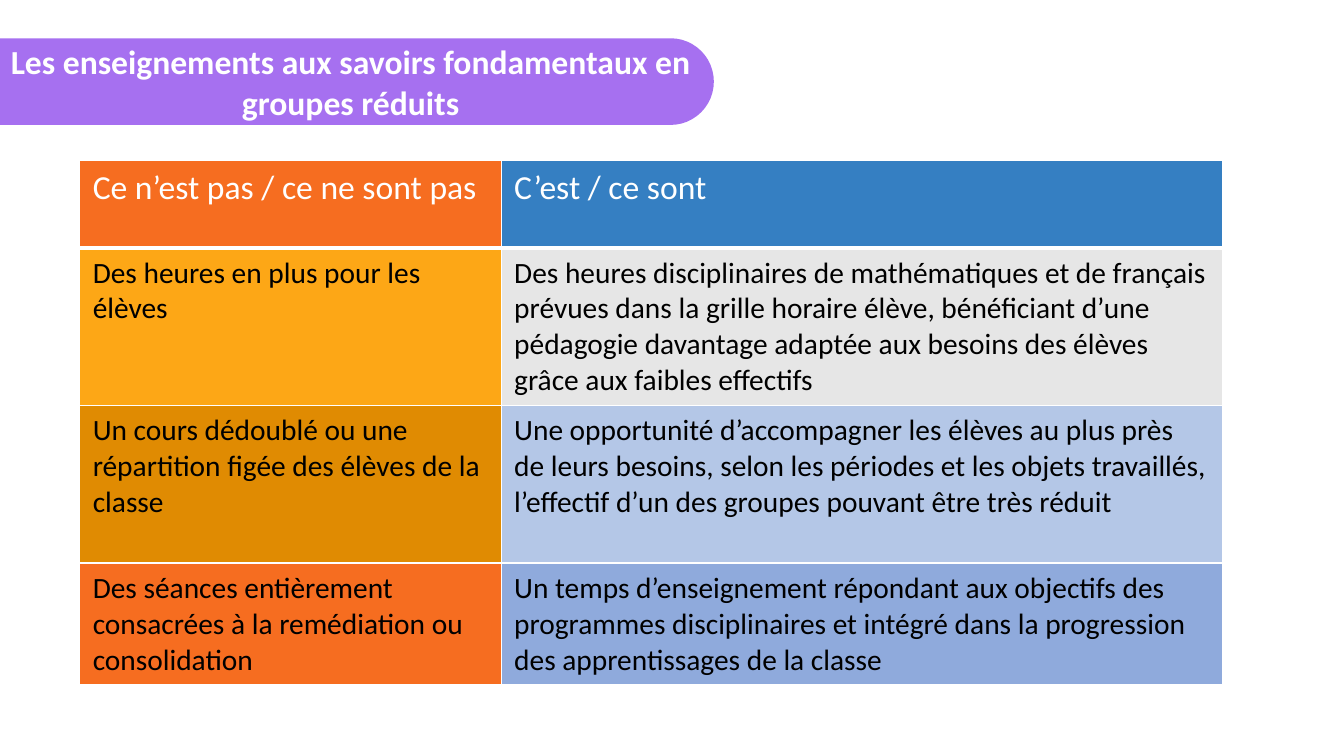
from dataclasses import dataclass

from lxml.etree import SubElement
from pptx import Presentation
from pptx.dml.color import RGBColor
from pptx.enum.shapes import MSO_SHAPE as Shape
from pptx.enum.text import MSO_ANCHOR as Anchor, PP_ALIGN as Align
from pptx.oxml.ns import qn
from pptx.util import Inches, Pt


@dataclass(frozen=True)
class Theme:
    font: str = "Calibri"
    heading_size: int = 24
    body_size: int = 21
    white: str = "FFFFFF"
    black: str = "000000"
    banner: str = "A670F0"
    left_fills: tuple = ("F66D20", "FDA716", "E08B02", "F66D20")
    right_fills: tuple = ("357FC2", "E6E6E6", "B4C7E7", "8FAADC")


THEME = Theme()
WIDTH, HEIGHT = 13.33, 7.5
COLUMNS = (4.18, 7.16)
ROWS = (0.87, 1.56, 1.56, 1.2)
TITLE = "Les enseignements aux savoirs fondamentaux en groupes réduits"
COMPARISON = (
    ("Ce n’est pas / ce ne sont pas", "C’est / ce sont"),
    ("Des heures en plus pour les élèves",
     "Des heures disciplinaires de mathématiques et de français prévues dans la "
     "grille horaire élève, bénéficiant d’une pédagogie davantage adaptée aux "
     "besoins des élèves grâce aux faibles effectifs"),
    ("Un cours dédoublé ou une répartition figée des élèves de la classe",
     "Une opportunité d’accompagner les élèves au plus près de leurs besoins, "
     "selon les périodes et les objets travaillés, l’effectif d’un des groupes "
     "pouvant être très réduit"),
    ("Des séances entièrement consacrées à la remédiation ou consolidation",
     "Un temps d’enseignement répondant aux objectifs des programmes "
     "disciplinaires et intégré dans la progression des apprentissages de la classe"),
)


def write(frame, text, size, color, bold=False, align=Align.LEFT):
    frame.word_wrap = True
    paragraph = frame.paragraphs[0]
    paragraph.alignment = align
    run = paragraph.add_run()
    run.text = text
    run.font.name = THEME.font
    run.font.size = Pt(size)
    run.font.bold = bold
    run.font.color.rgb = RGBColor.from_string(color)


def paint(fill, color):
    fill.solid()
    fill.fore_color.rgb = RGBColor.from_string(color)


def set_borders(cell, widths):
    properties = cell._tc.get_or_add_tcPr()
    for side, width in zip("LRTB", widths):
        line = SubElement(properties, qn(f"a:ln{side}"), w=str(Pt(width)))
        fill = SubElement(line, qn("a:solidFill"))
        SubElement(fill, qn("a:srgbClr"), val=THEME.white)


def add_banner(slide, left, top, width, height):
    # A quarter turn puts the two rounded corners on the right
    shape = slide.shapes.add_shape(
        Shape.ROUND_2_SAME_RECTANGLE,
        Inches(left + (width - height) / 2), Inches(top + (height - width) / 2),
        Inches(height), Inches(width))
    shape.rotation = 90
    shape.adjustments[0] = 0.5
    shape.adjustments[1] = 0
    shape.shadow.inherit = False
    paint(shape.fill, THEME.banner)
    shape.line.fill.background()
    frame = shape.text_frame
    frame.vertical_anchor = Anchor.MIDDLE
    frame._txBody.bodyPr.set("vert", "vert270")
    write(frame, TITLE, THEME.heading_size, THEME.white, bold=True, align=Align.CENTER)


def add_comparison(slide, left, top, width, height):
    table = slide.shapes.add_table(
        len(ROWS), len(COLUMNS),
        Inches(left), Inches(top), Inches(width), Inches(height)).table
    table.first_row = table.horz_banding = False
    for column, share in zip(table.columns, COLUMNS):
        column.width = Inches(width * share / sum(COLUMNS))
    for row, share in zip(table.rows, ROWS):
        row.height = Inches(height * share / sum(ROWS))

    # Header row in white, body rows in black
    for r, texts in enumerate(COMPARISON):
        header = r == 0
        size = THEME.heading_size if header else THEME.body_size
        color = THEME.white if header else THEME.black
        fills = (THEME.left_fills[r], THEME.right_fills[r])
        for c, (text, fill) in enumerate(zip(texts, fills)):
            cell = table.cell(r, c)
            cell.margin_left = cell.margin_right = Inches(0.13)
            cell.margin_top = cell.margin_bottom = Inches(0.07)
            set_borders(cell, (1, 1, 1, 3 if header else 1))
            paint(cell.fill, fill)
            write(cell.text_frame, text, size, color)


def main():
    presentation = Presentation()
    presentation.slide_width = Inches(WIDTH)
    presentation.slide_height = Inches(HEIGHT)
    slide = presentation.slides.add_slide(presentation.slide_layouts[6])
    add_banner(slide, 0, 0.38, 7.08, 0.86)
    add_comparison(slide, 0.79, 1.59, sum(COLUMNS), sum(ROWS))
    presentation.save("out.pptx")


if __name__ == "__main__":
    main()
